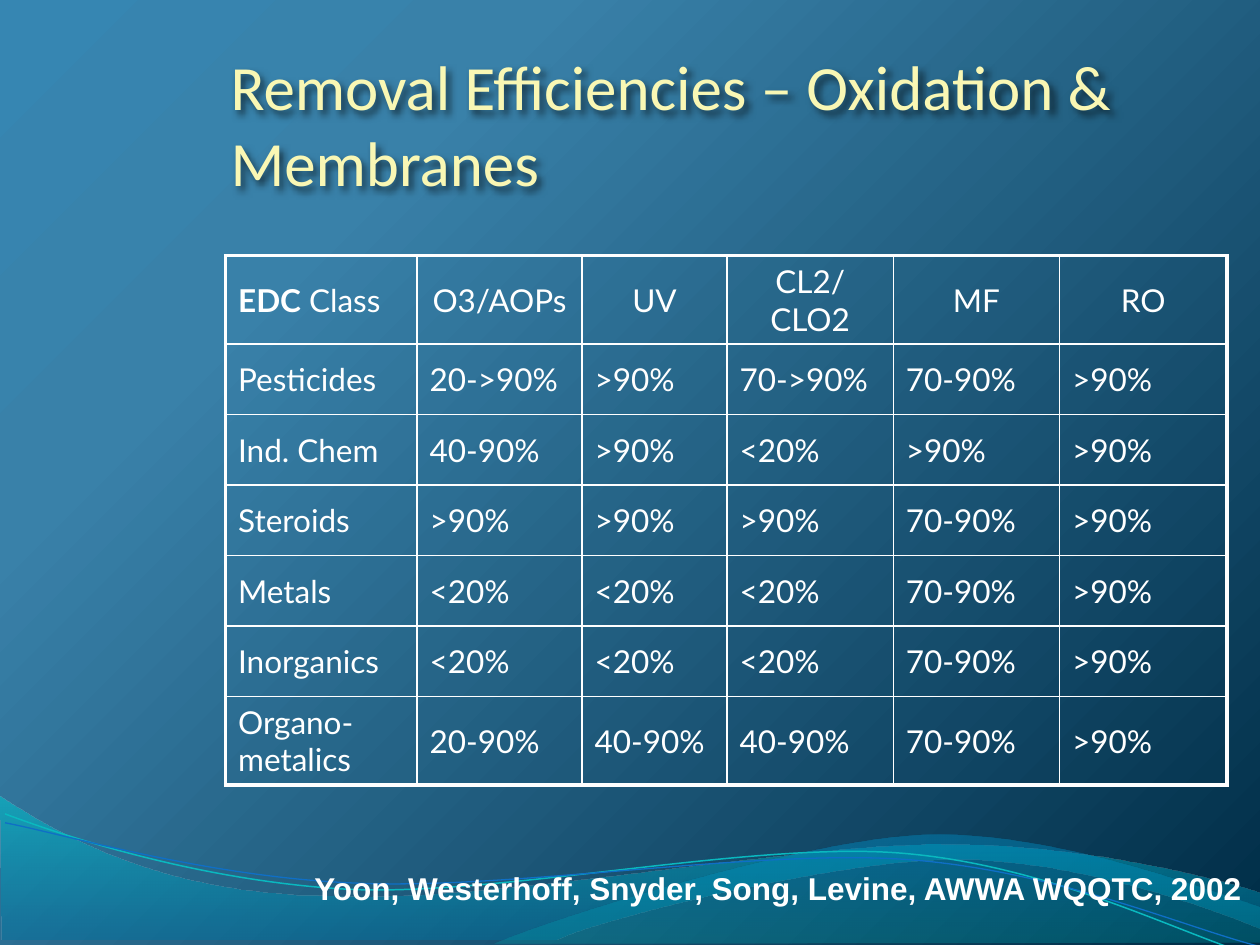
import pptx
import pptx.util
import pptx.dml.color
import pptx.enum.text
import pptx.oxml
import pptx.oxml.ns
import lxml.etree

deck = pptx.Presentation()
unit = pptx.util.Inches(1)  # the slide is a grid of 10 columns by 7.5 rows
deck.slide_width, deck.slide_height = 10 * unit, int(7.5 * unit)
slide = deck.slides.add_slide(deck.slide_layouts[5])
space = pptx.oxml.ns.nsdecls("a")
align = pptx.enum.text.PP_ALIGN
anchor = pptx.enum.text.MSO_ANCHOR


def hue(code):
    return pptx.dml.color.RGBColor.from_string(code)


def write(frame, text, size=18, font="Lato", color="FFFFFF", bold=False, side=align.LEFT):
    para = frame.paragraphs[0]
    para.alignment = side
    run = para.add_run()
    run.text = text
    run.font.size = pptx.util.Pt(size)
    run.font.name = font
    run.font.bold = bold
    run.font.color.rgb = hue(color)


# Background and waves: a start point, then lines (2 numbers) or curves (6)
slide.background.fill.gradient()
waves = [
    ([(0.01, 7.46), (4.41, 7.46), (4.76, 7.29, 6.64, 6.82, 7.59, 6.82),
      (8.53, 6.82, 9.58, 7.2, 10, 7.37), (10.01, 7.09),
      (9.83, 7.02, 8.7, 6.7, 7.46, 6.7), (6.22, 6.7, 3.82, 7.18, 2.58, 7.11),
      (1.3, 7.1, 0.47, 6.63, 0, 6.32), (0.01, 7.46)], None, 0),
    ([(3.92, 7.49), (4.27, 7.33, 6.29, 6.68, 7.3, 6.63),
      (8.31, 6.58, 9.55, 7.06, 10, 7.2), (10, 7.48), (3.92, 7.49)], None, 0),
    ([(0.04, 6.46), (0.52, 6.64, 1.61, 7, 2.79, 7.06),
      (3.98, 7.11, 5.94, 6.68, 7.13, 6.77),
      (8.33, 6.86, 9.38, 7.42, 9.97, 7.59)], "0AB8BF", 0.85),
    ([(0.04, 6.53), (0.51, 6.62, 1.67, 6.97, 2.86, 7.01),
      (4.05, 7.06, 5.99, 6.74, 7.17, 6.82),
      (8.36, 6.9, 9.4, 7.36, 9.99, 7.51)], "0F6FC6", 0.75),
]
for parts, color, width in waves:
    dots = [(part[i] * unit, part[i + 1] * unit)
            for part in parts for i in range(0, len(part), 2)]
    pen = slide.shapes.build_freeform(*dots[0], scale=1.0)
    pen.add_line_segments(dots[1:], close=color is None)
    wave = pen.convert_to_shape()
    # Join each three lines of a curve into one cubic segment
    lines = iter(wave._element.xpath(".//a:lnTo"))
    for part in parts[1:]:
        first = next(lines)
        if len(part) == 6:
            first.tag = pptx.oxml.ns.qn("a:cubicBezTo")
            for _ in range(2):
                line = next(lines)
                first.append(line[0])
                line.getparent().remove(line)
    wave.shadow.inherit = False
    if color:
        wave.fill.background()
        wave.line.color.rgb = hue(color)
        wave.line.width = pptx.util.Pt(width)
    else:
        wave.fill.gradient()
        wave.line.fill.background()

# Gradients: (place, colour, opacity) stops, then the direction
upward = '<a:lin ang="16200000" scaled="0"/>'
corner = '<a:path path="circle"><a:fillToRect r="100000" b="100000"/></a:path>'
blends = [
    ([(0, "3686B2", 100), (25, "3981A9", 100), (100, "002D47", 100)], corner),
    ([(0, "0074A1", 45), (100, "00C6CF", 55)], upward),
    ([(0, "00A1A9", 30), (80, "008BBF", 45)], upward),
]
for old, (stops, aim) in zip(slide.element.xpath(".//a:gradFill"), blends):
    marks = "".join(
        f'<a:gs pos="{place * 1000}"><a:srgbClr val="{color}">'
        f'<a:alpha val="{clear * 1000}"/></a:srgbClr></a:gs>'
        for place, color, clear in stops)
    old.getparent().replace(old, pptx.oxml.parse_xml(
        f'<a:gradFill {space} rotWithShape="1"><a:gsLst>{marks}</a:gsLst>{aim}</a:gradFill>'))

# Title with a soft shadow
title = slide.shapes.title
title.left, title.top, title.width, title.height = (
    int(n * unit) for n in (1.83, 0.33, 7.75, 1.25))
frame = title.text_frame
frame.margin_left = frame.margin_right = frame.margin_bottom = 0
frame.vertical_anchor = anchor.BOTTOM
frame.word_wrap = True
write(frame, "Removal Efficiencies – Oxidation & Membranes",
      size=36, font="Calibri", color="F9F7B4")
title._element.spPr.append(pptx.oxml.parse_xml(
    f'<a:effectLst {space}><a:outerShdw blurRad="50800" dist="38100" dir="2700000">'
    '<a:srgbClr val="000000"><a:alpha val="60000"/></a:srgbClr></a:outerShdw></a:effectLst>'))

# Table of removal rates
rates = [
    ["EDC", "O3/AOPs", "UV", "CL2/CLO2", "MF", "RO"],
    ["Pesticides", "20->90%", ">90%", "70->90%", "70-90%", ">90%"],
    ["Ind. Chem", "40-90%", ">90%", "<20%", ">90%", ">90%"],
    ["Steroids", ">90%", ">90%", ">90%", "70-90%", ">90%"],
    ["Metals", "<20%", "<20%", "<20%", "70-90%", ">90%"],
    ["Inorganics", "<20%", "<20%", "<20%", "70-90%", ">90%"],
    ["Organo-metalics", "20-90%", "40-90%", "40-90%", "70-90%", ">90%"],
]
cols = [1.52, 1.31, 1.15, 1.32, 1.32, 1.33]
high = 0.56
table = slide.shapes.add_table(
    len(rates), len(cols), int(1.79 * unit), int(2.03 * unit),
    int(sum(cols) * unit), int(high * len(rates) * unit)).table
table.first_row = table.horz_banding = False
for col, width in zip(table.columns, cols):
    col.width = int(width * unit)
for r, line in enumerate(rates):
    table.rows[r].height = int(high * unit)
    for c, text in enumerate(line):
        cell = table.cell(r, c)
        cell.vertical_anchor = anchor.MIDDLE
        head = r == 0 and c == 0
        write(cell.text_frame, text, bold=head,
              side=align.CENTER if r == 0 and c > 0 else align.LEFT)
        if head:
            write(cell.text_frame, " Class")
        # Thick outer frame, thin inner rules
        edges = {"L": c == 0, "R": c == len(cols) - 1,
                 "T": r == 0, "B": r == len(rates) - 1}
        props = cell._tc.get_or_add_tcPr()
        for edge, outer in edges.items():
            size = pptx.util.Pt(2.25 if outer else 1)
            props.append(pptx.oxml.parse_xml(
                f'<a:ln{edge} {space} w="{size}"><a:solidFill>'
                f'<a:srgbClr val="FFFFFF"/></a:solidFill></a:ln{edge}>'))
        cell.fill.background()

# Citation
cite = slide.shapes.add_textbox(*(int(n * unit) for n in (2.35, 6.85, 7.65, 0.4)))
cite.text_frame.word_wrap = False
cite.text_frame.auto_size = pptx.enum.text.MSO_AUTO_SIZE.SHAPE_TO_FIT_TEXT
write(cite.text_frame, "Yoon, Westerhoff, Snyder, Song, Levine, AWWA WQQTC, 2002",
      font="Arial", bold=True, side=align.CENTER)

deck.save("out.pptx")
